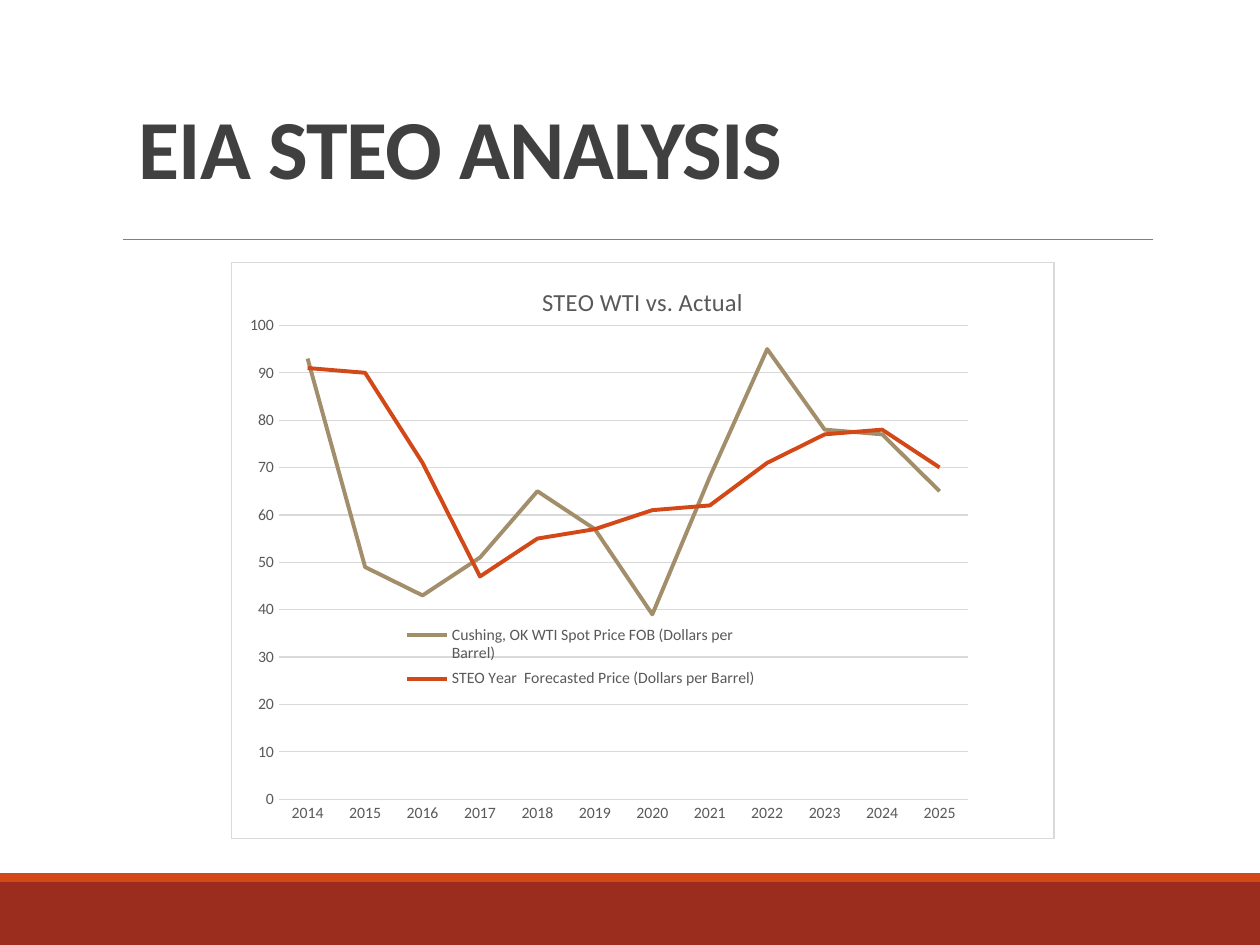
from dataclasses import dataclass

from lxml.etree import SubElement
from pptx import Presentation
from pptx.chart.data import CategoryChartData
from pptx.dml.color import RGBColor
from pptx.enum.chart import XL_CHART_TYPE, XL_LEGEND_POSITION, XL_TICK_MARK
from pptx.enum.shapes import MSO_CONNECTOR, MSO_SHAPE
from pptx.enum.text import MSO_ANCHOR, PP_ALIGN
from pptx.oxml import parse_xml
from pptx.oxml.ns import nsdecls, qn
from pptx.util import Inches, Pt


@dataclass(frozen=True)
class Theme:
    """Colours, font and type sizes of the slide."""
    font: str = "Calibri"
    title: str = "404040"
    label: str = "595959"
    rule: str = "808080"
    grid: str = "D9D9D9"
    paper: str = "FFFFFF"
    footer: str = "9B2D1F"
    accent: str = "D34817"
    sand: str = "A28E6A"
    title_size: float = 48
    chart_title_size: float = 14
    label_size: float = 9


THEME = Theme()
YEARS = [str(year) for year in range(2014, 2026)]
SERIES = [
    ("Cushing, OK WTI Spot Price FOB (Dollars per Barrel)", THEME.sand,
     [93, 49, 43, 51, 65, 57, 39, 68, 95, 78, 77, 65]),
    ("STEO Year  Forecasted Price (Dollars per Barrel)", THEME.accent,
     [91, 90, 71, 47, 55, 57, 61, 62, 71, 77, 78, 70]),
]


def apply_format(target, values):
    """Set each named attribute on the target."""
    for name, value in values.items():
        setattr(target, name, value)


def format_font(font, size, color, bold=False):
    """Give a font the theme typeface with a size and colour."""
    apply_format(font, {"name": THEME.font, "size": Pt(size), "bold": bold})
    font.color.rgb = RGBColor.from_string(color)


def format_line(line, color, width):
    """Give a line a solid colour and a width in points."""
    line.color.rgb = RGBColor.from_string(color)
    line.width = Pt(width)


def add_band(page, top, height, color):
    """Add a full-width footer band."""
    band = page.shapes.add_shape(
        MSO_SHAPE.RECTANGLE, 0, Inches(top), Inches(10), Inches(height))
    band.shadow.inherit = False
    band.fill.solid()
    band.fill.fore_color.rgb = RGBColor.from_string(color)
    band.line.fill.background()


def add_rule(page, left, right, top):
    """Add the thin horizontal rule under the title."""
    rule = page.shapes.add_connector(
        MSO_CONNECTOR.STRAIGHT, Inches(left), Inches(top), Inches(right), Inches(top))
    format_line(rule.line, THEME.rule, 0.5)
    SubElement(rule._element.spPr, qn("a:effectLst"))


def set_title(page, text):
    """Place and format the title placeholder."""
    box = page.shapes.title
    apply_format(box, {"left": Inches(1), "top": Inches(0.67),
                       "width": Inches(8.17), "height": Inches(0.94)})
    apply_format(box.text_frame, {"vertical_anchor": MSO_ANCHOR.BOTTOM, "word_wrap": True})
    para = box.text_frame.paragraphs[0]
    apply_format(para, {"alignment": PP_ALIGN.LEFT, "line_spacing": 0.85})
    span = para.add_run()
    span.text = text
    format_font(span.font, THEME.title_size, THEME.title, bold=True)
    span._r.get_or_add_rPr().set("spc", "-50")


def build_layout(left, top, width, height, inner=False):
    """Return a manual chart layout in fractions of the chart area."""
    target = '<c:layoutTarget val="inner"/>' if inner else ""
    places = "".join(f'<c:{name} val="{value}"/>' for name, value in
                     [("xMode", "edge"), ("yMode", "edge"), ("x", left),
                      ("y", top), ("w", width), ("h", height)])
    return parse_xml(f'<c:layout {nsdecls("c")}><c:manualLayout>{target}{places}'
                     '</c:manualLayout></c:layout>')


def frame_chart(chart):
    """Give the chart area a fill and a thin border."""
    area = parse_xml(
        f'<c:spPr {nsdecls("c", "a")}><a:solidFill><a:srgbClr val="{THEME.paper}"/></a:solidFill>'
        f'<a:ln w="{Pt(0.75)}"><a:solidFill><a:srgbClr val="{THEME.grid}"/></a:solidFill></a:ln>'
        '</c:spPr>')
    chart._chartSpace.find(qn("c:chart")).addnext(area)


def format_axes(chart):
    """Style both axes and the value gridlines."""
    for axis in (chart.category_axis, chart.value_axis):
        apply_format(axis, {"major_tick_mark": XL_TICK_MARK.NONE,
                            "minor_tick_mark": XL_TICK_MARK.NONE})
        format_font(axis.tick_labels.font, THEME.label_size, THEME.label)
    format_line(chart.category_axis.format.line, THEME.grid, 0.75)
    apply_format(chart.value_axis, {"minimum_scale": 0, "maximum_scale": 100,
                                    "major_unit": 10, "has_major_gridlines": True})
    chart.value_axis.format.line.fill.background()
    format_line(chart.value_axis.major_gridlines.format.line, THEME.grid, 0.75)


def format_legend(chart):
    """Place the legend inside the lower part of the plot."""
    chart.has_legend = True
    legend = chart.legend
    apply_format(legend, {"position": XL_LEGEND_POSITION.RIGHT, "include_in_layout": False})
    format_font(legend.font, THEME.label_size, THEME.label)
    for old in legend._element.findall(qn("c:layout")):
        legend._element.remove(old)
    legend._element.find(qn("c:legendPos")).addnext(build_layout(0.2, 0.62, 0.45, 0.13))


def add_price_chart(page):
    """Add the line chart of forecast and actual prices."""
    data = CategoryChartData(number_format="0")
    data.categories = YEARS
    for name, _, values in SERIES:
        data.add_series(name, values)
    chart = page.shapes.add_chart(
        XL_CHART_TYPE.LINE, Inches(1.83), Inches(2.08), Inches(6.54), Inches(4.58), data).chart
    format_font(chart.font, THEME.label_size, THEME.label)
    frame_chart(chart)
    chart.has_title = True
    span = chart.chart_title.text_frame.paragraphs[0].add_run()
    span.text = "STEO WTI vs. Actual"
    format_font(span.font, THEME.chart_title_size, THEME.label)
    chart.plots[0].vary_by_categories = False
    for series, (_, color, _) in zip(chart.plots[0].series, SERIES):
        series.smooth = False
        format_line(series.format.line, color, 2.25)
    format_axes(chart)
    format_legend(chart)
    plot_area = chart._chartSpace.chart.plotArea
    for old in plot_area.findall(qn("c:layout")):
        plot_area.remove(old)
    plot_area.insert(0, build_layout(0.058, 0.109, 0.838, 0.823, inner=True))


def main():
    """Build the slide and save the deck."""
    deck = Presentation()
    apply_format(deck, {"slide_width": Inches(10), "slide_height": Inches(7.5)})
    page = deck.slides.add_slide(deck.slide_layouts.get_by_name("Title Only"))
    add_band(page, 7, 0.5, THEME.footer)
    add_band(page, 6.93, 0.07, THEME.accent)
    add_rule(page, 0.98, 9.15, 1.9)
    set_title(page, "EIA STEO ANALYSIS")
    add_price_chart(page)
    deck.save("out.pptx")


if __name__ == "__main__":
    main()
